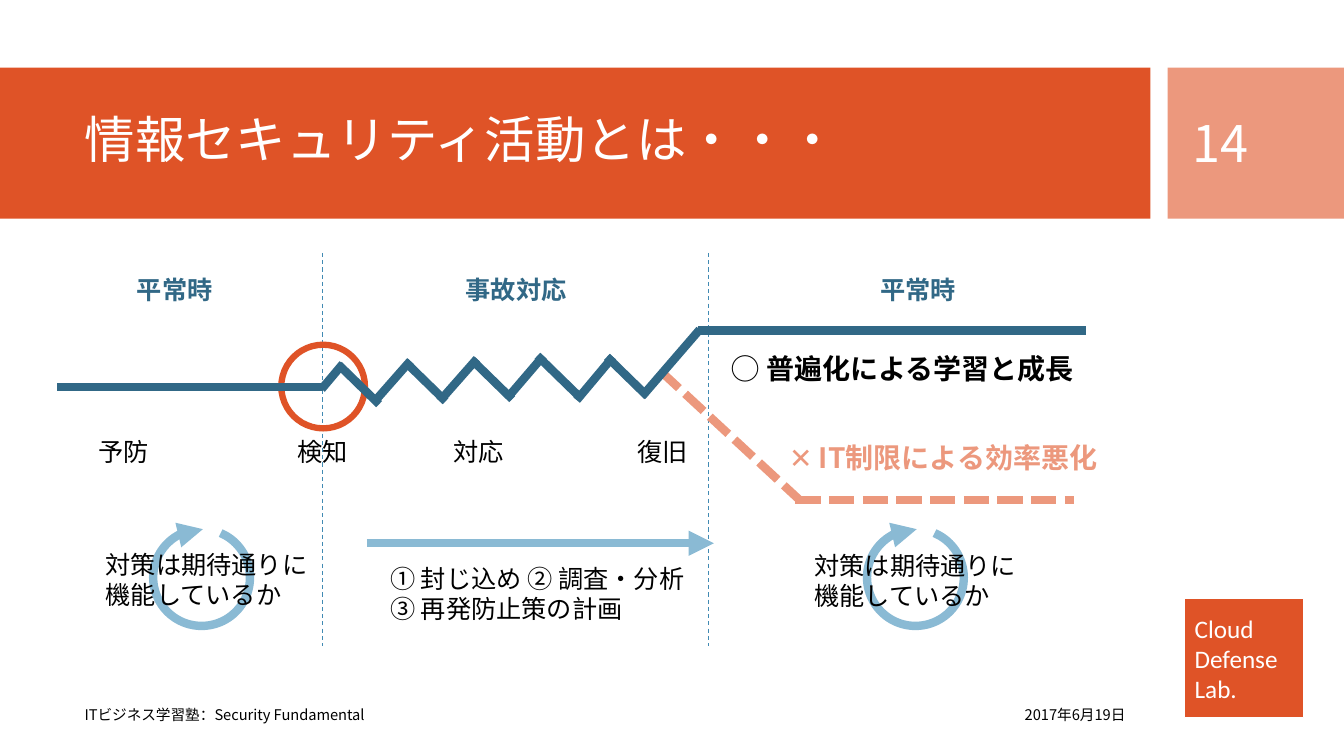
from dataclasses import dataclass
from typing import Any, Optional

from lxml import etree
from pptx import Presentation
from pptx.dml.color import RGBColor
from pptx.enum.dml import MSO_LINE
from pptx.enum.shapes import MSO_CONNECTOR, MSO_SHAPE
from pptx.enum.text import MSO_ANCHOR, MSO_AUTO_SIZE, PP_ALIGN
from pptx.oxml.ns import qn
from pptx.util import Inches, Pt

RECT, OVAL, ARC = MSO_SHAPE.RECTANGLE, MSO_SHAPE.OVAL, MSO_SHAPE.ARC
STRAIGHT = MSO_CONNECTOR.STRAIGHT
DASH, SYS_DASH = MSO_LINE.DASH, MSO_LINE.SQUARE_DOT
TOP, MIDDLE = MSO_ANCHOR.TOP, MSO_ANCHOR.MIDDLE
LEFT, CENTER, RIGHT = PP_ALIGN.LEFT, PP_ALIGN.CENTER, PP_ALIGN.RIGHT
FIT_SHAPE = MSO_AUTO_SIZE.SHAPE_TO_FIT_TEXT


@dataclass(frozen=True)
class Theme:
    accent: str = "DF5327"
    accent_light: str = "EC987D"
    navy: str = "316886"
    blue: str = "418AB3"
    sky: str = "8ABAD4"
    black: str = "000000"
    white: str = "FFFFFF"
    font: str = "Noto Sans CJK JP"
    badge_font: str = "Calibri"
    title: float = 36
    outcome: float = 20
    body: float = 18
    footer: float = 10.5
    thick: float = 6
    ring: float = 4.5
    thin: float = 0.75


THEME = Theme()


@dataclass(frozen=True)
class Label:
    text: str
    x: float
    y: float
    w: float
    h: float = 0.4
    color: str = THEME.black
    size: float = THEME.body
    bold: bool = False
    align: Any = LEFT
    anchor: Any = TOP
    wrap: bool = False
    fit: bool = True


@dataclass(frozen=True)
class Stroke:
    x1: float
    y1: float
    x2: float
    y2: float
    color: str = THEME.navy
    width: float = THEME.thick
    dash: Optional[Any] = None
    arrow: bool = False


def phase(text: str, x: float, w: float) -> Label:
    return Label(text, x, 2.67, w, color=THEME.navy, bold=True)


def outcome(text: str, x: float, y: float, color: str) -> Label:
    return Label(text, x, y, 3.65, 0.44, color, THEME.outcome, True, CENTER, wrap=True)


CHECK = "対策は期待通りに\n機能しているか"
FOOTERS = [
    Label("14", 11.73, 0.82, 1.26, 1.19, THEME.white, THEME.title,
          anchor=MIDDLE, wrap=True, fit=False),
    Label("2017年6月19日", 8.26, 6.89, 3, size=THEME.footer, align=RIGHT,
          anchor=MIDDLE, wrap=True, fit=False),
    Label("ITビジネス学習塾：Security Fundamental", 0.74, 6.89, 7.51, size=THEME.footer,
          anchor=MIDDLE, wrap=True, fit=False),
]
STEPS = [Label(text, x, 4.28, 0.71) for text, x in
         [("検知", 2.85), ("予防", 0.88), ("対応", 4.4), ("復旧", 6.22)]]
PHASES = [phase("平常時", 1.26, 0.96), phase("事故対応", 4.52, 1.21),
          phase("平常時", 8.63, 0.96)]
ACTIVITIES = [
    Label(CHECK, 0.95, 5.4, 2.22, 0.71),
    Label("① 封じ込め ② 調査・分析\n③ 再発防止策の計画", 3.77, 5.54, 3.24, 0.71),
    Label(CHECK, 7.98, 5.41, 2.22, 0.71),
]
OUTCOMES = [outcome("◯ 普遍化による学習と成長", 7.13, 3.44, THEME.black),
            outcome("✕ IT制限による効率悪化", 7.53, 4.32, THEME.accent_light)]

DIVIDERS = [Stroke(x, 2.51, x, 6.41, THEME.blue, THEME.thin, DASH) for x in (7.03, 3.2)]
RESPONSE_ARROW = Stroke(3.64, 5.39, 7.08, 5.39, THEME.sky, arrow=True)
DECLINE = [Stroke(*ends, THEME.accent_light, dash=SYS_DASH) for ends in
           [(6.55, 3.68, 7.93, 4.96), (7.89, 4.96, 10.65, 4.96)]]
LEVELS = [Stroke(0.57, 3.84, 3.2, 3.84), Stroke(6.92, 3.28, 10.77, 3.28)]
RISES = [Stroke(*ends) for ends in [
    (3.19, 3.86, 3.4, 3.61), (3.7, 4, 4.07, 3.58), (4.36, 3.98, 4.73, 3.56),
    (5.03, 3.95, 5.39, 3.53), (5.72, 3.97, 6.08, 3.54), (6.37, 3.93, 6.94, 3.27)]]
FALLS = [Stroke(x, y, x + 0.4, y + 0.39) for x, y in
         [(3.36, 3.62), (4.02, 3.59), (4.68, 3.57), (5.33, 3.53), (6.02, 3.54)]]


def write(tf: Any, text: str, *, size: float, color: str, font: str = THEME.font,
          bold: bool = False, align: Any = LEFT, anchor: Any = TOP,
          spacing: Optional[float] = None) -> None:
    """Fill a text frame, one paragraph per line of text."""
    tf.vertical_anchor = anchor
    for i, line in enumerate(text.split("\n")):
        p = tf.add_paragraph() if i else tf.paragraphs[0]
        p.alignment = align
        if spacing:
            p.line_spacing = spacing
        r = p.add_run()
        r.text = line
        r.font.size, r.font.bold, r.font.name = Pt(size), bold, font
        r.font.color.rgb = RGBColor.from_string(color)
        east_asian = etree.SubElement(r.font._element, qn("a:ea"))
        east_asian.set("typeface", font)


def add_label(slide: Any, label: Label) -> None:
    box = slide.shapes.add_textbox(*map(Inches, (label.x, label.y, label.w, label.h)))
    tf = box.text_frame
    tf.word_wrap = label.wrap
    if label.fit:
        tf.auto_size = FIT_SHAPE
    write(tf, label.text, size=label.size, color=label.color, bold=label.bold,
          align=label.align, anchor=label.anchor)


def add_shape(slide: Any, kind: Any, x: float, y: float, w: float, h: float, *,
              fill: Optional[str] = None, line: Optional[str] = None,
              width: float = 1) -> Any:
    sp = slide.shapes.add_shape(kind, *map(Inches, (x, y, w, h)))
    sp.shadow.inherit = False
    if fill:
        sp.fill.solid()
        sp.fill.fore_color.rgb = RGBColor.from_string(fill)
    else:
        sp.fill.background()
    if line:
        sp.line.color.rgb = RGBColor.from_string(line)
        sp.line.width = Pt(width)
    else:
        sp.line.fill.background()
    return sp


def add_arrowhead(sp: Any) -> None:
    ln = sp.element.find(".//" + qn("a:ln"))
    etree.SubElement(ln, qn("a:tailEnd")).set("type", "triangle")


def add_stroke(slide: Any, stroke: Stroke) -> None:
    ends = map(Inches, (stroke.x1, stroke.y1, stroke.x2, stroke.y2))
    sp = slide.shapes.add_connector(STRAIGHT, *ends)
    sp.line.color.rgb = RGBColor.from_string(stroke.color)
    sp.line.width = Pt(stroke.width)
    if stroke.dash:
        sp.line.dash_style = stroke.dash
    if stroke.arrow:
        add_arrowhead(sp)
    etree.SubElement(sp.element.spPr, qn("a:effectLst"))


def add_cycle(slide: Any, x: float) -> None:
    sp = add_shape(slide, ARC, x, 5.25, 0.96, 0.96, line=THEME.sky, width=THEME.thick)
    sp.adjustments[0], sp.adjustments[1] = 175.96, 162.93
    add_arrowhead(sp)


def add_frame(slide: Any) -> None:
    """Badge, title band and page-number band, with the title in front."""
    badge = add_shape(slide, RECT, 11.75, 5.94, 1.18, 1.18, fill=THEME.accent,
                      line=THEME.white)
    write(badge.text_frame, "Cloud\nDefense\nLab.", size=THEME.body, color=THEME.white,
          font=THEME.badge_font, anchor=MIDDLE)
    add_shape(slide, RECT, 0, 0.67, 11.41, 1.5, fill=THEME.accent)
    page_band = add_shape(slide, RECT, 11.58, 0.67, 1.75, 1.5, fill=THEME.accent_light)
    title = slide.shapes.title
    title.left, title.top, title.width, title.height = map(Inches, (0.74, 0.82, 10.51, 1.18))
    write(title.text_frame, "情報セキュリティ活動とは・・・", size=THEME.title,
          color=THEME.white, anchor=MIDDLE, spacing=0.9)
    page_band.element.addnext(title.element)


def main() -> None:
    prs = Presentation()
    prs.slide_width, prs.slide_height = Inches(13.33), Inches(7.5)
    slide = prs.slides.add_slide(prs.slide_layouts[5])
    add_frame(slide)
    for divider in DIVIDERS:
        add_stroke(slide, divider)
    add_shape(slide, OVAL, 2.79, 3.42, 0.83, 0.83, line=THEME.accent, width=THEME.ring)
    for x in (1.52, 8.6):
        add_cycle(slide, x)
    for stroke in [RESPONSE_ARROW, *DECLINE, *LEVELS, *RISES, *FALLS]:
        add_stroke(slide, stroke)
    for label in FOOTERS + STEPS + PHASES + ACTIVITIES + OUTCOMES:
        add_label(slide, label)
    prs.save("out.pptx")


if __name__ == "__main__":
    main()
